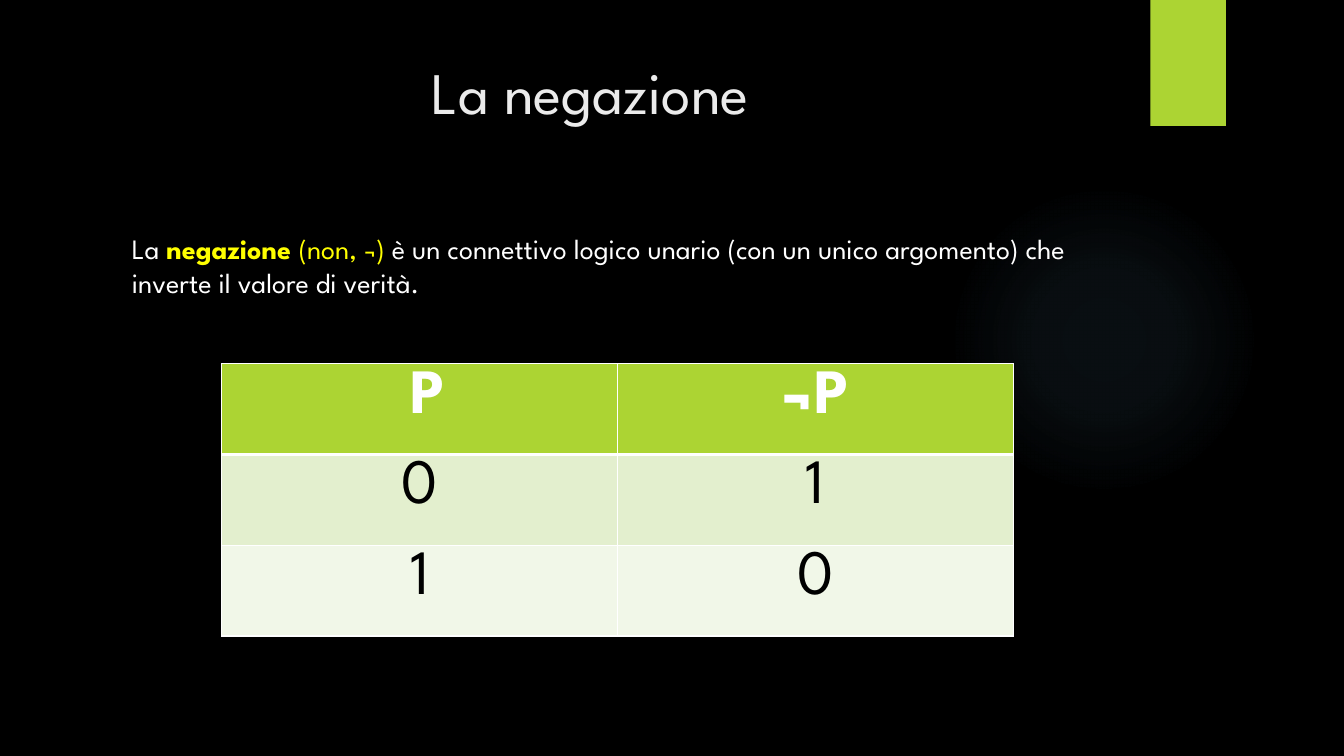
from dataclasses import dataclass

from pptx import Presentation
from pptx.dml.color import RGBColor
from pptx.enum.shapes import MSO_SHAPE
from pptx.enum.text import MSO_ANCHOR, MSO_AUTO_SIZE, PP_ALIGN
from pptx.oxml import parse_xml
from pptx.oxml.ns import nsdecls
from pptx.util import Inches, Pt

RECTANGLE, ELLIPSE = MSO_SHAPE.RECTANGLE, MSO_SHAPE.OVAL
TOP, NO_FIT = MSO_ANCHOR.TOP, MSO_AUTO_SIZE.NONE
CENTER, LEFT = PP_ALIGN.CENTER, PP_ALIGN.LEFT
TITLE_ONLY = 5


@dataclass(frozen=True)
class Theme:
    font: str = "League Spartan"
    background: str = "000000"
    accent: str = "ACD433"
    glow: str = "7AC4F0"
    title: str = "EBEBEB"
    light: str = "FFFFFF"
    dark: str = "000000"
    highlight: str = "FFFF00"
    row_fills: tuple = ("E3EFCE", "F1F7E8")
    title_size: int = 42
    body_size: int = 20
    table_size: int = 45
    thin: int = 1
    thick: int = 3


class SlideBuilder:
    def __init__(self, presentation, theme):
        self.theme = theme
        self.slide = presentation.slides.add_slide(presentation.slide_layouts[TITLE_ONLY])
        self.fill(self.slide.background, theme.background)

    def fill(self, target, color):
        target.fill.solid()
        target.fill.fore_color.rgb = RGBColor.from_string(color)

    def add_runs(self, frame, runs, size, align=LEFT):
        """Fill one paragraph with (text, color, bold) runs."""
        paragraph = frame.paragraphs[0]
        paragraph.alignment = align
        for text, color, bold in runs:
            run = paragraph.add_run()
            run.text = text
            style = {"name": self.theme.font, "size": Pt(size), "bold": bold}
            for attribute, value in style.items():
                setattr(run.font, attribute, value)
            run.font.color.rgb = RGBColor.from_string(color)

    def set_frame(self, frame):
        settings = {"word_wrap": True, "auto_size": NO_FIT, "vertical_anchor": TOP}
        for attribute, value in settings.items():
            setattr(frame, attribute, value)

    def title(self, text, left, top, width, height):
        heading = self.slide.shapes.title
        place = {"left": left, "top": top, "width": width, "height": height}
        for attribute, value in place.items():
            setattr(heading, attribute, Inches(value))
        self.set_frame(heading.text_frame)
        self.add_runs(heading.text_frame, [(text, self.theme.title, False)],
                      self.theme.title_size, CENTER)

    def text(self, runs, *box):
        body = self.slide.shapes.add_textbox(*map(Inches, box))
        self.set_frame(body.text_frame)
        self.add_runs(body.text_frame, runs, self.theme.body_size)

    def shape(self, kind, *box):
        shape = self.slide.shapes.add_shape(kind, *map(Inches, box))
        shape.shadow.inherit = False
        shape.line.fill.background()
        return shape

    def ribbon(self, *box):
        self.fill(self.shape(RECTANGLE, *box), self.theme.accent)

    def glow(self, stops, *box):
        """Draw a radial fade from (position, opacity) stops in percent."""
        halo = self.shape(ELLIPSE, *box)
        halo.fill.background()
        stop_xml = "".join(
            f'<a:gs pos="{position * 1000}"><a:srgbClr val="{self.theme.glow}">'
            f'<a:alpha val="{opacity * 1000}"/></a:srgbClr></a:gs>'
            for position, opacity in stops)
        gradient = parse_xml(
            f'<a:gradFill {nsdecls("a")} rotWithShape="1"><a:gsLst>{stop_xml}</a:gsLst>'
            '<a:path path="circle"><a:fillToRect l="50000" t="50000" r="50000" b="50000"/>'
            '</a:path></a:gradFill>')
        properties = halo.element.spPr
        properties.replace(properties.find("{*}noFill"), gradient)

    def borders(self, cell, widths):
        properties = cell._tc.get_or_add_tcPr()
        for side, width in widths.items():
            properties.append(parse_xml(
                f'<a:ln{side} {nsdecls("a")} w="{Pt(width)}"><a:solidFill>'
                f'<a:srgbClr val="{self.theme.light}"/></a:solidFill></a:ln{side}>'))

    def truth_table(self, rows, *box):
        theme = self.theme
        table = self.slide.shapes.add_table(len(rows), len(rows[0]), *map(Inches, box)).table
        for row, values in enumerate(rows):
            header = row == 0
            fill = theme.accent if header else theme.row_fills[(row - 1) % 2]
            color = theme.light if header else theme.dark
            widths = {"L": theme.thin, "R": theme.thin,
                      "T": theme.thick if row == 1 else theme.thin,
                      "B": theme.thick if header else theme.thin}
            for column, value in enumerate(values):
                cell = table.cell(row, column)
                self.borders(cell, widths)
                self.fill(cell, fill)
                self.add_runs(cell.text_frame, [(value, color, header)],
                              theme.table_size, CENTER)


def main():
    presentation = Presentation()
    presentation.slide_width = Inches(13.33)
    presentation.slide_height = Inches(7.5)
    theme = Theme()
    negation = SlideBuilder(presentation, theme)
    negation.glow([(0, 7), (36, 6), (69, 0)], 9.41, 1.83, 3.08, 3.08)
    negation.ribbon(11.41, 0, 0.75, 1.25)
    negation.title("La negazione", 0.71, 0.5, 10.29, 1.53)
    definition = [
        ("La ", theme.light, False),
        ("negazione ", theme.highlight, True),
        ("(non, ¬) ", theme.highlight, False),
        ("è un connettivo logico unario (con un unico argomento) che inverte "
         "il valore di verità.", theme.light, False),
    ]
    negation.text(definition, 1.21, 2.25, 9.78, 4.59)
    negation.truth_table([(" P", "¬P"), ("0", "1"), ("1", "0")], 2.2, 3.61, 7.85, 2.7)
    presentation.save("out.pptx")


if __name__ == "__main__":
    main()
